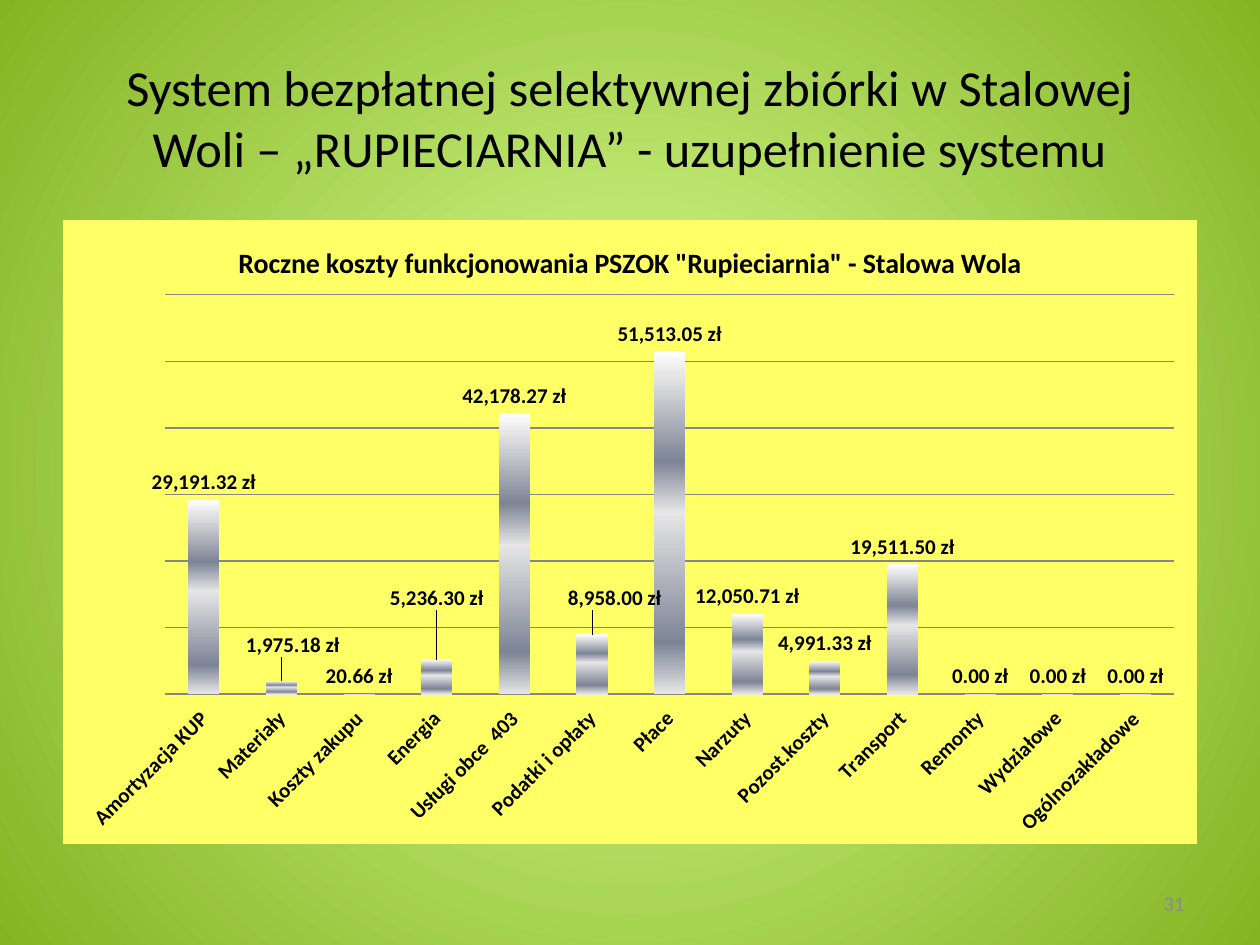
from lxml import etree
from pptx import Presentation
from pptx.chart.data import CategoryChartData
from pptx.dml.color import RGBColor
from pptx.enum.chart import XL_CHART_TYPE, XL_LABEL_POSITION, XL_TICK_LABEL_POSITION, XL_TICK_MARK
from pptx.enum.text import MSO_ANCHOR, PP_ALIGN
from pptx.oxml import parse_xml
from pptx.oxml.ns import nsdecls, qn
from pptx.util import Emu, Pt

COLUMNS = XL_CHART_TYPE.COLUMN_CLUSTERED
OUTSIDE_END = XL_LABEL_POSITION.OUTSIDE_END
LABELS_LOW = XL_TICK_LABEL_POSITION.LOW
NO_TICKS = XL_TICK_MARK.NONE
MIDDLE = MSO_ANCHOR.MIDDLE
CENTER, RIGHT = PP_ALIGN.CENTER, PP_ALIGN.RIGHT

EMU_PER_PX = 914400 / 126
FONT = "Calibri"
MONEY = '#,##0.00\\ "zł"'
COLORS = {"text": "000000", "number": "8B8B8B", "grid": "868686", "panel": "FFFF66"}
BACKGROUND_STOPS = [(0, "D9FF95"), (100, "84B423")]
STEEL_STOPS = [(0, "FFFFFF"), (7, "E6E6E6"), (32, "7D8496"),
               (47, "E6E6E6"), (85, "7D8496"), (100, "E6E6E6")]
RADIAL = '<a:path path="circle"><a:fillToRect l="50000" t="50000" r="50000" b="50000"/></a:path>'
DOWNWARD = '<a:lin ang="5400000" scaled="0"/>'
COSTS = {
    "Amortyzacja KUP": 29191.32,
    "Materiały": 1975.18,
    "Koszty zakupu": 20.66,
    "Energia": 5236.30,
    "Usługi obce  403": 42178.27,
    "Podatki i opłaty": 8958.00,
    "Płace": 51513.05,
    "Narzuty": 12050.71,
    "Pozost.koszty": 4991.33,
    "Transport": 19511.50,
    "Remonty": 0,
    "Wydziałowe": 0,
    "Ogólnozakładowe": 0,
}
LABEL_SHIFTS = {1: (0.01, -0.03), 3: (0, -0.07), 5: (0.02, -0.03)}


def px(length):
    return Emu(round(length * EMU_PER_PX))


def rgb(name):
    return RGBColor.from_string(COLORS[name])


def manual_layout(**settings):
    layout = etree.Element(qn("c:layout"))
    manual = etree.SubElement(layout, qn("c:manualLayout"))
    for key, value in settings.items():
        etree.SubElement(manual, qn(f"c:{key}")).set("val", str(value))
    return layout


class Deck:
    def __init__(self, width, height):
        self.presentation = Presentation()
        self.presentation.slide_width = px(width)
        self.presentation.slide_height = px(height)
        self.slide = None

    def add_slide(self):
        self.slide = self.presentation.slides.add_slide(self.presentation.slide_layouts[5])

    def style(self, font, size, color="text", bold=False):
        font.name, font.size, font.bold = FONT, Pt(size), bold
        font.color.rgb = rgb(color)

    def gradient(self, fill, owner, stops, direction):
        fill.solid()
        solid = next(owner.iter(qn("a:solidFill")))
        marks = "".join(f'<a:gs pos="{position * 1000}"><a:srgbClr val="{color}"/></a:gs>'
                        for position, color in stops)
        solid.getparent().replace(solid, parse_xml(
            f'<a:gradFill {nsdecls("a")} rotWithShape="1">'
            f'<a:gsLst>{marks}</a:gsLst>{direction}</a:gradFill>'))

    def background(self, stops):
        self.gradient(self.slide.background.fill, self.slide.element, stops, RADIAL)

    def set_text(self, shape, text, size, align, color="text"):
        frame = shape.text_frame
        frame.text = text
        frame.word_wrap = True
        frame.vertical_anchor = MIDDLE
        paragraph = frame.paragraphs[0]
        paragraph.alignment = align
        self.style(paragraph.runs[0].font, size, color)

    def title(self, text, left, top, width, height):
        heading = self.slide.shapes.title
        heading.left, heading.top = px(left), px(top)
        heading.width, heading.height = px(width), px(height)
        self.set_text(heading, text, 28.8, CENTER)

    def page_number(self, text, left, top, width, height):
        box = self.slide.shapes.add_textbox(px(left), px(top), px(width), px(height))
        self.set_text(box, text, 12, RIGHT, "number")

    def cost_chart(self, heading, costs, left, top, width, height):
        data = CategoryChartData(number_format=MONEY)
        data.categories = list(costs)
        data.add_series("Series 1", list(costs.values()))
        chart = self.slide.shapes.add_chart(
            COLUMNS, px(left), px(top), px(width), px(height), data).chart
        self.style(chart.font, 10)
        chart.has_legend = False
        chart.has_title = True
        chart.chart_title.include_in_layout = False
        chart.chart_title.text_frame.text = heading
        self.style(chart.chart_title.text_frame.paragraphs[0].runs[0].font, 16, bold=True)
        self.chart_panel(chart)
        self.axes(chart)
        plot = chart.plots[0]
        plot.gap_width = 150
        plot.vary_by_categories = False
        self.columns(plot.series[0])

    def chart_panel(self, chart):
        body = chart.element.find(qn("c:chart"))
        body.addnext(parse_xml(
            f'<c:spPr {nsdecls("c", "a")}><a:solidFill><a:srgbClr val="{COLORS["panel"]}"/>'
            '</a:solidFill><a:ln><a:noFill/></a:ln></c:spPr>'))
        plot_area = body.find(qn("c:plotArea"))
        for layout in plot_area.findall(qn("c:layout")):
            plot_area.remove(layout)
        plot_area.insert(0, manual_layout(layoutTarget="inner", xMode="edge", yMode="edge",
                                          x=0.09, y=0.12, w=0.89, h=0.64))

    def axes(self, chart):
        values = chart.value_axis
        values.minimum_scale, values.maximum_scale, values.major_unit = 0, 60000, 10000
        values.tick_labels.number_format = MONEY
        values.tick_labels.number_format_is_linked = False
        values.has_major_gridlines = True
        values.visible = False
        names = chart.category_axis
        names.major_tick_mark = NO_TICKS
        names.tick_label_position = LABELS_LOW
        self.style(names.tick_labels.font, 12, bold=True)
        names._element.find(qn("c:txPr")).find(qn("a:bodyPr")).set("rot", "-2700000")
        for line in (values.major_gridlines.format.line, names.format.line):
            line.color.rgb = rgb("grid")
            line.width = Pt(0.75)

    def columns(self, series):
        self.gradient(series.format.fill, series._element, STEEL_STOPS, DOWNWARD)
        labels = series.data_labels
        labels.show_value = True
        labels.number_format = MONEY
        labels.number_format_is_linked = False
        labels.position = OUTSIDE_END
        self.style(labels.font, 12, bold=True)
        for index in LABEL_SHIFTS:
            label = series.points[index].data_label
            label.position = OUTSIDE_END
            self.style(label.font, 12, bold=True)
        for node, (x, y) in zip(series._element.iter(qn("c:dLbl")), LABEL_SHIFTS.values()):
            number_format = etree.Element(qn("c:numFmt"), formatCode=MONEY, sourceLinked="0")
            node.insert(1, manual_layout(x=x, y=y))
            node.insert(2, number_format)

    def save(self):
        self.presentation.save("out.pptx")


def main():
    deck = Deck(1260, 945)
    deck.add_slide()
    deck.background(BACKGROUND_STOPS)
    deck.title("System bezpłatnej selektywnej zbiórki w Stalowej Woli – „RUPIECIARNIA” - "
               "uzupełnienie systemu", 63, 38, 1134, 158)
    deck.cost_chart('Roczne koszty funkcjonowania PSZOK "Rupieciarnia" - Stalowa Wola',
                    COSTS, 63, 220, 1134, 624)
    deck.page_number("31", 903, 878, 294, 50)
    deck.save()


if __name__ == "__main__":
    main()
